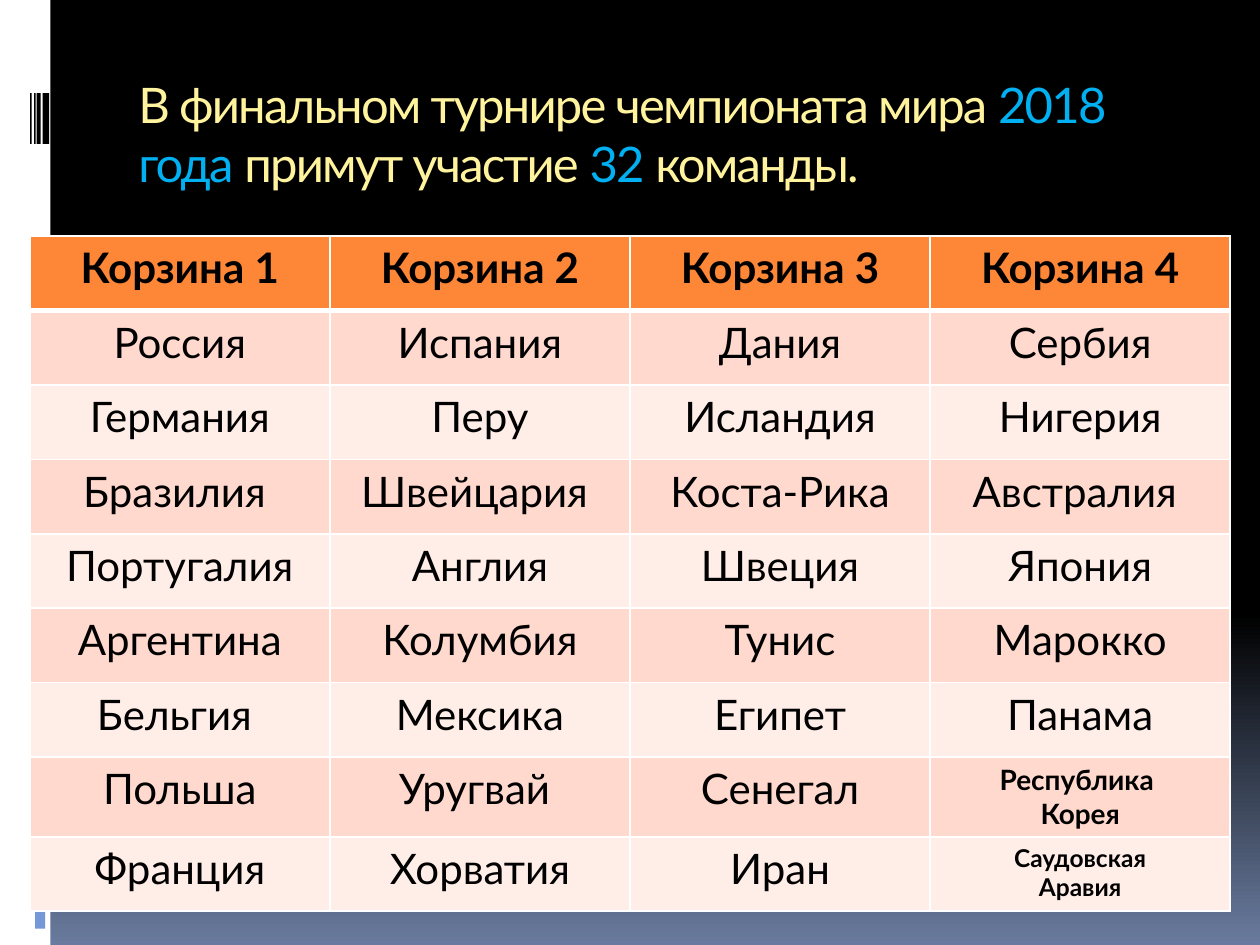
from dataclasses import dataclass

from lxml import etree
from pptx import Presentation
from pptx.dml.color import RGBColor
from pptx.enum.shapes import MSO_SHAPE
from pptx.enum.text import MSO_ANCHOR, PP_ALIGN
from pptx.oxml.ns import qn
from pptx.util import Cm, Pt

RECT = MSO_SHAPE.RECTANGLE
MIDDLE = MSO_ANCHOR.MIDDLE
CENTER = PP_ALIGN.CENTER


@dataclass(frozen=True)
class Theme:
    font: str = "Lato"
    black: str = "000000"
    white: str = "FFFFFF"
    dusk: str = "697B9E"
    blue: str = "7598D9"
    red: str = "B32C16"
    slate: str = "575F6D"
    title: str = "FFF39D"
    accent: str = "00B0F0"
    header: str = "FE8637"
    bands: tuple = ("FFD9CE", "FFEDE8")
    title_size: int = 28
    cell_size: int = 24


class SlideBuilder:
    """Draws styled elements on the current slide."""

    def __init__(self, s, theme):
        self.s = s
        self.theme = theme

    def background(self):
        fill = self.s.background.fill
        fill.gradient()
        fill.gradient_angle = 270
        stops = ((0.65, self.theme.black), (1, self.theme.dusk))
        for stop, (position, color) in zip(fill.gradient_stops, stops):
            stop.position = position
            stop.color.rgb = RGBColor.from_string(color)

    def bar(self, x, y, w, h, color):
        sp = self.s.shapes.add_shape(RECT, Cm(x), Cm(y), Cm(w), Cm(h))
        sp.shadow.inherit = False
        sp.fill.solid()
        sp.fill.fore_color.rgb = RGBColor.from_string(color)
        sp.line.fill.background()

    def style_run(self, r, size, color, bold=False):
        r.font.name = self.theme.font
        r.font.size = Pt(size)
        r.font.bold = bold
        r.font.color.rgb = RGBColor.from_string(color)

    def title(self, x, y, w, h, parts):
        tf = self.s.shapes.add_textbox(Cm(x), Cm(y), Cm(w), Cm(h)).text_frame
        tf.word_wrap = True
        tf.vertical_anchor = MIDDLE
        for text, color in parts:
            r = tf.paragraphs[0].add_run()
            r.text = text
            self.style_run(r, self.theme.title_size, color)
            r.font._element.set("spc", "-100")

    def borders(self, cell, top, bottom):
        tc_pr = cell._tc.get_or_add_tcPr()
        sides = (("a:lnL", 1), ("a:lnR", 1), ("a:lnT", top), ("a:lnB", bottom))
        for i, (tag, width) in enumerate(sides):
            ln = etree.Element(qn(tag), w=str(Pt(width)))
            fill = etree.SubElement(ln, qn("a:solidFill"))
            etree.SubElement(fill, qn("a:srgbClr"), val=self.theme.white)
            tc_pr.insert(i, ln)

    def cell(self, cell, text, fill, size, bold):
        cell.fill.solid()
        cell.fill.fore_color.rgb = RGBColor.from_string(fill)
        tf = cell.text_frame
        tf.text = text
        for p in tf.paragraphs:
            p.alignment = CENTER
            for r in p.runs:
                self.style_run(r, size, self.theme.black, bold)

    def table(self, x, y, col_w, row_h, rows, small):
        n_rows, n_cols = len(rows), len(rows[0])
        table = self.s.shapes.add_table(
            n_rows, n_cols, Cm(x), Cm(y), Cm(col_w * n_cols), Cm(row_h * n_rows)
        ).table
        for col in table.columns:
            col.width = Cm(col_w)
        for i, values in enumerate(rows):
            table.rows[i].height = Cm(row_h)
            fill = self.theme.bands[(i - 1) % 2] if i else self.theme.header
            for j, text in enumerate(values):
                cell = table.cell(i, j)
                size = small.get(text, self.theme.cell_size)
                self.cell(cell, text, fill, size, i == 0 or text in small)
                self.borders(cell, 3 if i == 1 else 1, 3 if i == 0 else 1)


def main():
    prs = Presentation()
    prs.slide_width, prs.slide_height = Cm(25.4), Cm(19.05)
    theme = Theme()
    slide = SlideBuilder(prs.slides.add_slide(prs.slide_layouts[6]), theme)

    slide.background()
    slide.bar(0, 0, 1.02, 19.05, theme.white)
    for y, h, color in (
        (14.02, 4.7, theme.blue),
        (13.34, 0.64, theme.red),
        (12.88, 0.38, theme.slate),
        (12.62, 0.2, theme.blue),
    ):
        slide.bar(0.71, y, 0.2, h, color)
    for x, w in ((0.86, 0.13), (0.74, 0.08), (0.69, 0.03), (0.61, 0.03)):
        slide.bar(x, 1.88, w, 1.02, theme.black)

    slide.title(2.54, 1.42, 21.59, 2.54, (
        ("В финальном турнире чемпионата мира ", theme.title),
        ("2018 года ", theme.accent),
        ("примут участие ", theme.title),
        ("32", theme.accent),
        (" команды.", theme.title),
    ))

    korea, saudi = "Республика \nКорея", "Саудовская\nАравия"
    baskets = (
        ("Корзина 1", "Корзина 2", "Корзина 3", "Корзина 4"),
        ("Россия", "Испания", "Дания", "Сербия"),
        ("Германия", "Перу", "Исландия", "Нигерия"),
        ("Бразилия ", "Швейцария ", "Коста-Рика", "Австралия "),
        ("Португалия", "Англия", "Швеция", "Япония"),
        ("Аргентина", "Колумбия", "Тунис", "Марокко"),
        ("Бельгия ", "Мексика", "Египет", "Панама"),
        ("Польша", "Уругвай ", "Сенегал", korea),
        ("Франция", "Хорватия", "Иран", saudi),
    )
    slide.table(0.6, 4.76, 6.05, 1.5, baskets, {korea: 16, saudi: 14})
    prs.save("out.pptx")


if __name__ == "__main__":
    main()
